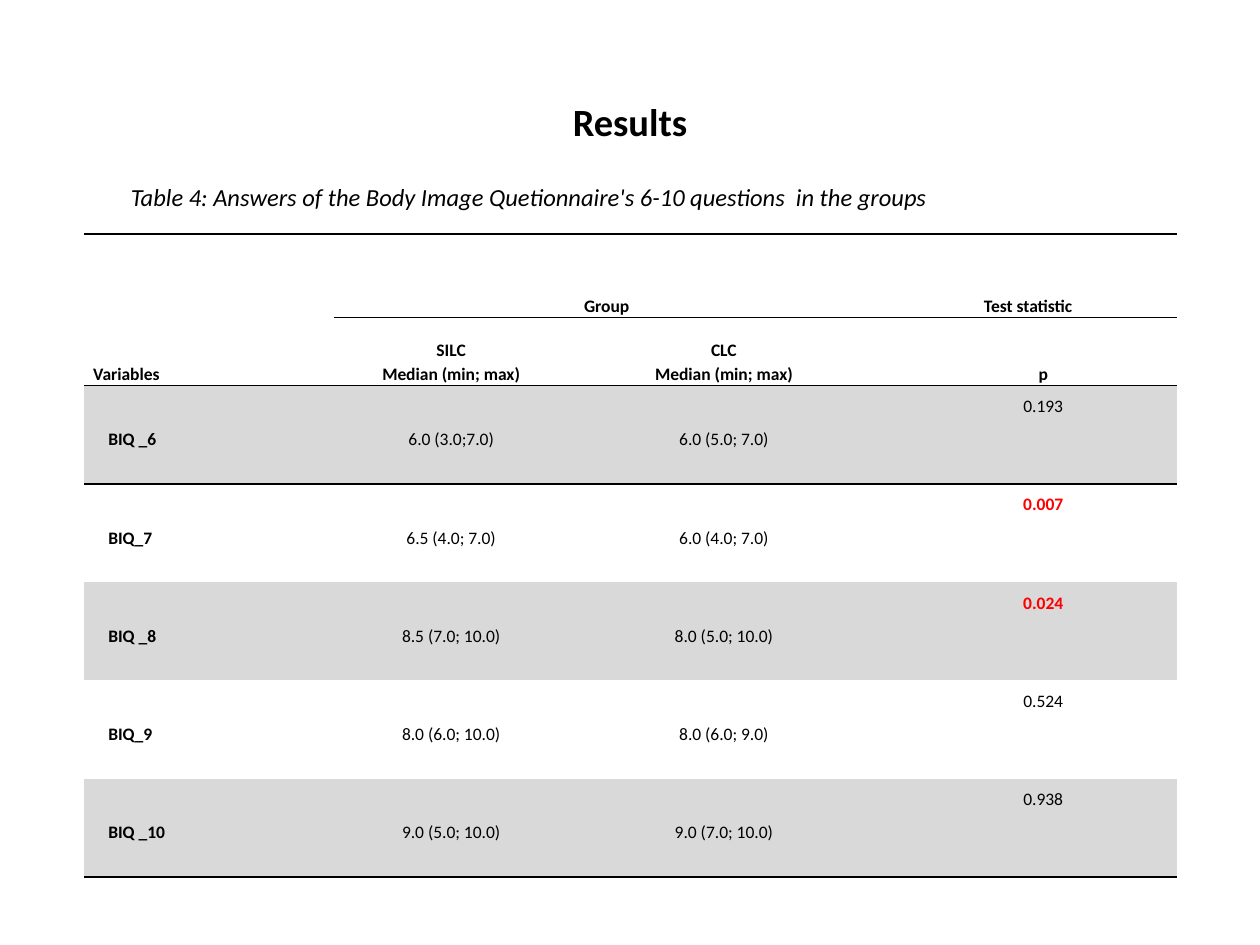
from lxml import etree
from pptx import Presentation
from pptx import util as u
from pptx.dml import color
from pptx.enum import text
from pptx.oxml import ns

WIDE, HIGH = 10, 7.5
COLS = [1.98, 1.86, 2.47, 0.24, 2.12]
ROWS = [0.66, 0.54] + [0.78] * 5
PLAIN = "{2D5ABB26-0587-4C30-8999-92F81FD0307C}"
BLACK, RED, GREY = "000000", "FF0000", "D9D9D9"
MID, LOW, TOP = text.MSO_ANCHOR.MIDDLE, text.MSO_ANCHOR.BOTTOM, text.MSO_ANCHOR.TOP
LEFT, MEAN = text.PP_ALIGN.LEFT, text.PP_ALIGN.CENTER
DATA = [
    ("BIQ _6", "6.0 (3.0;7.0)", "6.0 (5.0; 7.0)", "0.193"),
    ("BIQ_7", "6.5 (4.0; 7.0)", "6.0 (4.0; 7.0)", "0.007"),
    ("BIQ _8", "8.5 (7.0; 10.0)", "8.0 (5.0; 10.0)", "0.024"),
    ("BIQ_9", "8.0 (6.0; 10.0)", "8.0 (6.0; 9.0)", "0.524"),
    ("BIQ _10", "9.0 (5.0; 10.0)", "9.0 (7.0; 10.0)", "0.938"),
]


def paint(code):
    return color.RGBColor.from_string(code)


def indent(para, size):
    props = para._p.get_or_add_pPr()
    props.set("marL", str(u.Inches(size)))
    props.set("indent", "0")


def write(para, words, size, bold=False, italic=False, tint=BLACK, align=MEAN):
    para.alignment = align
    run = para.add_run()
    run.text = words
    font = run.font
    font.name, font.size = "Calibri", u.Pt(size)
    font.bold, font.italic = bold, italic
    font.color.rgb = paint(tint)


def add_title(slide):
    title = slide.shapes.title
    title.left, title.top = u.Inches(0.05 * WIDE), u.Inches(0.77)
    title.width, title.height = u.Inches(0.9 * WIDE), u.Inches(0.05 * HIGH)
    title.text_frame.vertical_anchor = MID
    write(title.text_frame.paragraphs[0], "Results", 22, bold=True)


def add_note(slide):
    box = slide.shapes.add_textbox(
        u.Inches(0.05 * WIDE), u.Inches(1.31), u.Inches(0.9 * WIDE), u.Inches(0.5))
    frame = box.text_frame
    frame.word_wrap = True
    frame.vertical_anchor = MID
    para = frame.paragraphs[0]
    indent(para, 0.44)
    write(para, "Table 4: Answers of the Body Image Quetionnaire's 6-10 questions  in the groups",
          14, italic=True, align=LEFT)


def rule(cell, side, width):
    props = cell._tc.get_or_add_tcPr()
    line = etree.SubElement(props, ns.qn("a:ln" + side), w=str(u.Pt(width)))
    fill = etree.SubElement(line, ns.qn("a:solidFill"))
    etree.SubElement(fill, ns.qn("a:srgbClr"), val=BLACK)


def fill_cell(cell, lines, anchor, space=1.5, inset=0, **look):
    cell.vertical_anchor = anchor
    frame = cell.text_frame
    for n, words in enumerate(lines):
        para = frame.add_paragraph() if n else frame.paragraphs[0]
        para.line_spacing = space
        if inset:
            indent(para, inset)
        write(para, words, 10, **look)


def style_cell(cell, row, col):
    cell.margin_left = cell.margin_right = u.Inches(0.07)
    cell.margin_top = cell.margin_bottom = 0
    tops = {0: 1.5, 1: 1, 2: 1}
    lows = {0: 1, 1: 1, len(ROWS) - 1: 1.5}
    if row in tops and (row, col) != (1, 0):
        rule(cell, "T", tops[row])
    if row in lows:
        rule(cell, "B", lows[row])
    if row >= 2 and row % 2 == 0:
        cell.fill.solid()
        cell.fill.fore_color.rgb = paint(GREY)
    else:
        cell.fill.background()


def add_grid(slide):
    frame = slide.shapes.add_table(
        len(ROWS), len(COLS), u.Inches(0.67), u.Inches(1.86),
        u.Inches(sum(COLS)), u.Inches(sum(ROWS)))
    grid = frame.table
    grid.first_row = grid.horz_banding = False
    grid._tbl.tblPr.find(ns.qn("a:tableStyleId")).text = PLAIN
    for col, width in zip(grid.columns, COLS):
        col.width = u.Inches(width)
    for row, height in zip(grid.rows, ROWS):
        row.height = u.Inches(height)
    for row in range(len(ROWS)):
        for col in range(len(COLS)):
            style_cell(grid.cell(row, col), row, col)
    for start, end in [((0, 0), (1, 0)), ((0, 1), (0, 2)), ((0, 3), (0, 4))]:
        grid.cell(*start).merge(grid.cell(*end))
    return grid


def add_heads(grid):
    fill_cell(grid.cell(0, 0), ["Variables"], LOW, bold=True, align=LEFT)
    for col, words in [(1, "Group"), (3, "Test statistic")]:
        fill_cell(grid.cell(0, col), [words], LOW, bold=True)
    span = "Median (min; max)"
    for col, lines in [(1, ["SILC", span]), (2, ["CLC", span]), (4, ["p"])]:
        fill_cell(grid.cell(1, col), lines, LOW, space=1.15, bold=True)


def add_data(grid):
    for row, (name, silc, clc, prob) in enumerate(DATA, 2):
        fill_cell(grid.cell(row, 0), [name], MID, inset=0.12, bold=True, align=LEFT)
        fill_cell(grid.cell(row, 1), [silc], MID)
        fill_cell(grid.cell(row, 2), [clc], MID)
        strong = float(prob) < 0.05
        fill_cell(grid.cell(row, 4), [prob], TOP, bold=strong, tint=RED if strong else BLACK)


def main():
    deck = Presentation()
    deck.slide_width, deck.slide_height = u.Inches(WIDE), u.Inches(HIGH)
    slide = deck.slides.add_slide(deck.slide_layouts[5])
    add_title(slide)
    add_note(slide)
    grid = add_grid(slide)
    add_heads(grid)
    add_data(grid)
    deck.save("out.pptx")


if __name__ == "__main__":
    main()
